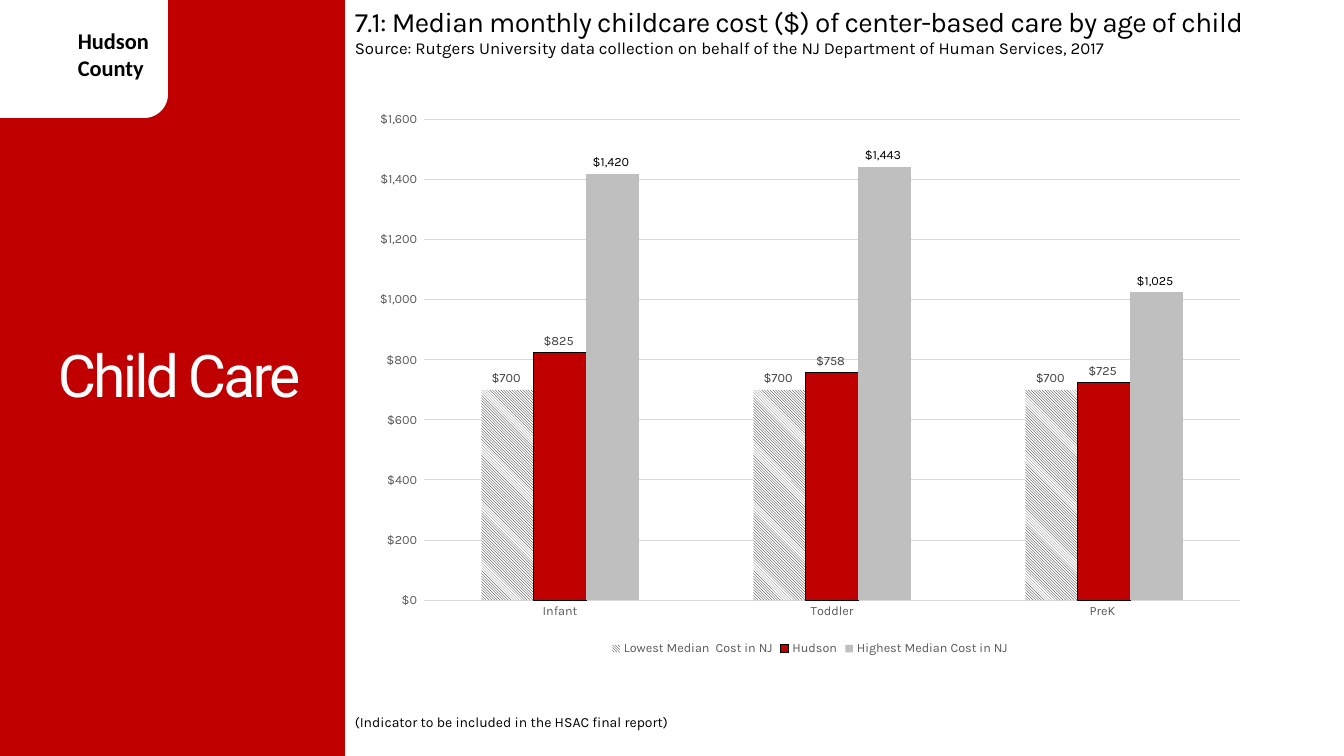
from pptx import Presentation
from pptx.chart.data import CategoryChartData
from pptx.dml.color import RGBColor
from pptx.enum.chart import XL_CHART_TYPE, XL_LABEL_POSITION, XL_LEGEND_POSITION, XL_TICK_MARK
from pptx.enum.dml import MSO_PATTERN
from pptx.enum.shapes import MSO_SHAPE
from pptx.enum.text import MSO_ANCHOR, PP_ALIGN
from pptx.util import Emu, Pt

RECT, ROUND = MSO_SHAPE.RECTANGLE, MSO_SHAPE.ROUNDED_RECTANGLE
TOP, MIDDLE = MSO_ANCHOR.TOP, MSO_ANCHOR.MIDDLE
LEFT, CENTER, JUSTIFY = PP_ALIGN.LEFT, PP_ALIGN.CENTER, PP_ALIGN.JUSTIFY
COLUMNS = XL_CHART_TYPE.COLUMN_CLUSTERED
BOTTOM = XL_LEGEND_POSITION.BOTTOM
OUTSIDE = XL_LABEL_POSITION.OUTSIDE_END
NO_TICK = XL_TICK_MARK.NONE
HATCH = MSO_PATTERN.LIGHT_DOWNWARD_DIAGONAL

THEME = {
    "red": "C00000", "white": "FFFFFF", "black": "000000", "silver": "BFBFBF",
    "grid": "D9D9D9", "axis": "595959", "label": "404040",
    "county": ("Calibri", 16), "topic": ("Roboto", 42), "title": ("Karla", 20),
    "source": ("Karla", 12), "note": ("Karla", 10), "chart": ("Calibri", 10),
    "small": ("Karla", 9),
}

PANELS = [
    (RECT, (0, 0, 345, 756), "red"),
    (ROUND, (-33, -25, 201, 143), "white"),
]

TEXTS = [
    ("Hudson County", (68, 22, 98, 65), "county", "black", TOP, LEFT, 0),
    ("Child Care", (0, 76, 358, 605), "topic", "white", MIDDLE, CENTER, -200),
    ("7.1: Median monthly childcare cost ($) of center-based care by age of child",
     (345, 0, 994, 44), "title", "black", TOP, LEFT, -50),
    ("Source: Rutgers University data collection on behalf of the NJ Department of Human Services, 2017",
     (345, 33, 926, 30), "source", "black", TOP, LEFT, 0),
    ("(Indicator to be included in the HSAC final report)",
     (345, 701, 957, 41), "note", "black", MIDDLE, JUSTIFY, 0),
]

PLOT = (362, 101, 896, 559)
AGES = ["Infant", "Toddler", "PreK "]
COSTS = [
    ("Lowest Median  Cost in NJ", (700, 700, 700), None, None, "label"),
    ("Hudson", (825, 758, 725), "red", "black", "label"),
    ("Highest Median Cost in NJ", (1420, 1443, 1025), "silver", None, "black"),
]
MONEY = '"$"#,##0_);[Red]\\("$"#,##0\\)'


def px(n):
    return Emu(round(n * 914400 / 100.8))


def place(box):
    return [px(n) for n in box]


def tint(name):
    return RGBColor.from_string(THEME[name])


def style(font, kind, color):
    name, size = THEME[kind]
    font.name, font.size = name, Pt(size)
    font.color.rgb = tint(color)


def stroke(line, color):
    line.color.rgb = tint(color)
    line.width = Pt(0.75)


def add_panel(slide, shape, box, color):
    panel = slide.shapes.add_shape(shape, *place(box))
    panel.shadow.inherit = False
    panel.fill.solid()
    panel.fill.fore_color.rgb = tint(color)
    panel.line.fill.background()


def add_text(slide, words, box, kind, color, anchor, align, gap):
    frame = slide.shapes.add_textbox(*place(box)).text_frame
    frame.word_wrap = True
    frame.vertical_anchor = anchor
    frame.text = words
    para = frame.paragraphs[0]
    para.alignment = align
    run = para.runs[0]
    style(run.font, kind, color)
    if kind == "county":
        run.font.bold = True
    if kind == "topic":
        para.line_spacing = 0.9
    if gap:
        run.font._element.set("spc", str(gap))


def add_costs(slide):
    data = CategoryChartData(number_format=MONEY)
    data.categories = AGES
    for name, costs, *_ in COSTS:
        data.add_series(name, costs)
    chart = slide.shapes.add_chart(COLUMNS, *place(PLOT), data).chart
    style(chart.font, "chart", "black")
    chart.has_title = False
    chart.has_legend = True
    chart.legend.position = BOTTOM
    chart.legend.include_in_layout = False
    style(chart.legend.font, "small", "axis")

    ages, scale = chart.category_axis, chart.value_axis
    for axis in (ages, scale):
        axis.major_tick_mark = axis.minor_tick_mark = NO_TICK
        style(axis.tick_labels.font, "small", "axis")
    stroke(ages.format.line, "grid")
    scale.format.line.fill.background()
    scale.minimum_scale, scale.maximum_scale, scale.major_unit = 0, 1600, 200
    scale.tick_labels.number_format = MONEY
    scale.tick_labels.number_format_is_linked = False
    stroke(scale.major_gridlines.format.line, "grid")

    plot = chart.plots[0]
    plot.gap_width, plot.overlap = 219, 0
    plot.vary_by_categories = False
    for bars, (_, _, fill, edge, ink) in zip(plot.series, COSTS):
        look = bars.format
        if fill:
            look.fill.solid()
            look.fill.fore_color.rgb = tint(fill)
        else:
            look.fill.patterned()
            look.fill.pattern = HATCH
            look.fill.fore_color.rgb = tint("black")
            look.fill.back_color.rgb = tint("white")
        if edge:
            stroke(look.line, edge)
        else:
            look.line.fill.background()
        tags = bars.data_labels
        tags.show_value = True
        tags.position = OUTSIDE
        tags.number_format = MONEY
        tags.number_format_is_linked = False
        style(tags.font, "small", ink)


def main():
    deck = Presentation()
    deck.slide_width, deck.slide_height = px(1344), px(756)
    slide = deck.slides.add_slide(deck.slide_layouts[6])
    for panel in PANELS:
        add_panel(slide, *panel)
    for text in TEXTS:
        add_text(slide, *text)
    add_costs(slide)
    deck.save("out.pptx")


if __name__ == "__main__":
    main()
